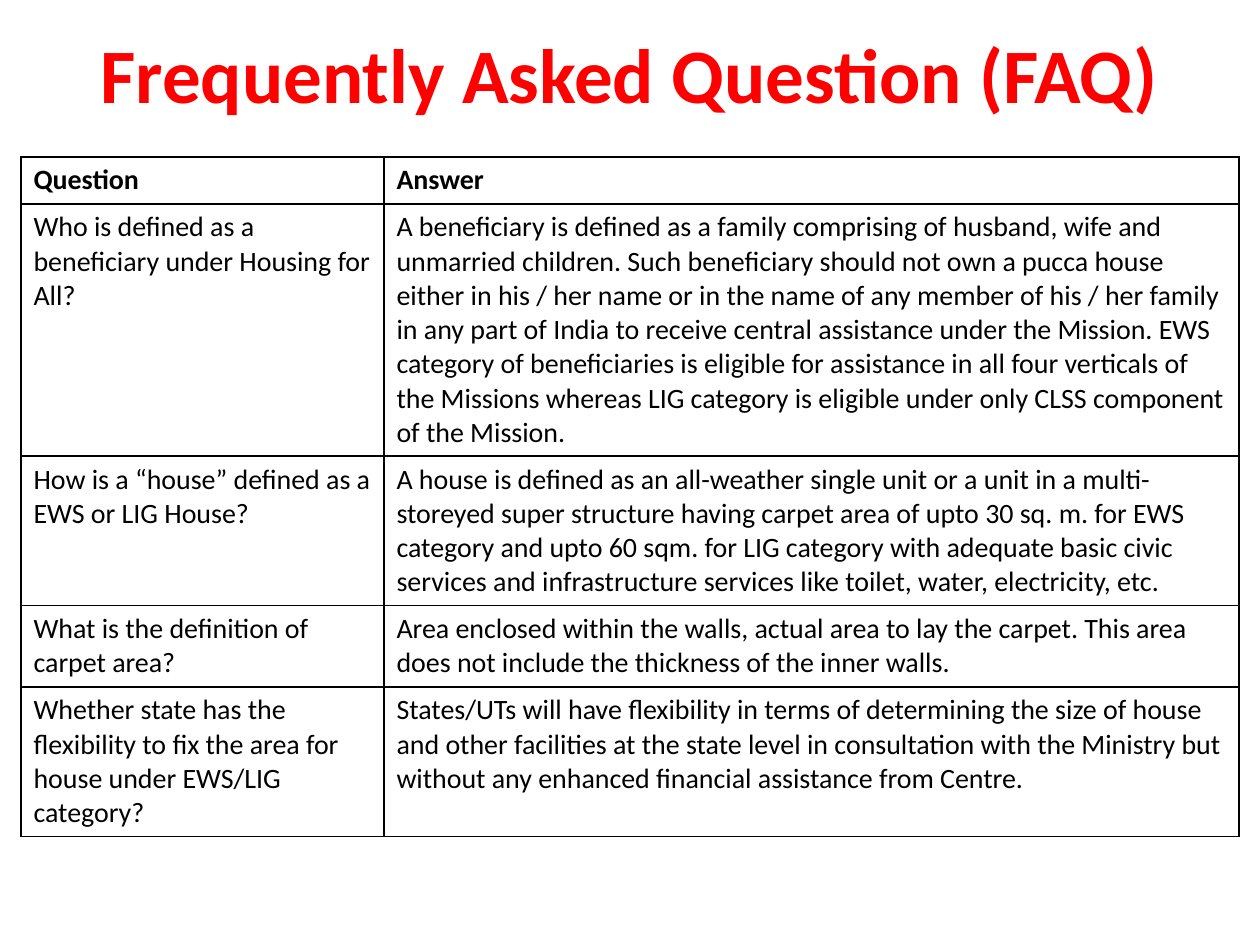
from lxml import etree
from pptx import Presentation, util as u
from pptx.dml.color import RGBColor
from pptx.enum import text
from pptx.oxml.ns import qn

# Content
TITLE = "Frequently Asked Question (FAQ)"
FAQ = [
    ("Question", "Answer"),
    ("Who is defined as a beneficiary under Housing for All?",
     "A beneficiary is defined as a family comprising of husband, wife and unmarried children. "
     "Such beneficiary should not own a pucca house either in his / her name or in the name of "
     "any member of his / her family in any part of India to receive central assistance under "
     "the Mission. EWS category of beneficiaries is eligible for assistance in all four "
     "verticals of the Missions whereas LIG category is eligible under only CLSS component of "
     "the Mission."),
    ("How is a “house” defined as a EWS or LIG House?",
     "A house is defined as an all-weather single unit or a unit in a multi-storeyed super "
     "structure having carpet area of upto 30 sq. m. for EWS category and upto 60 sqm. for LIG "
     "category with adequate basic civic services and infrastructure services like toilet, "
     "water, electricity, etc."),
    ("What is the definition of carpet area?",
     "Area enclosed within the walls, actual area to lay the carpet. This area does not include "
     "the thickness of the inner walls."),
    ("Whether state has the flexibility to fix the area for house under EWS/LIG category?",
     "States/UTs will have flexibility in terms of determining the size of house and other "
     "facilities at the state level in consultation with the Ministry but without any enhanced "
     "financial assistance from Centre."),
]

# Layout in px, 126 to the inch
PX = u.Inches(1) // 126
LEFT, TITLE_TOP, TITLE_HEIGHT, TABLE_TOP = 21, 10, 104, 157
COLUMNS = [363, 855]
ROWS = [46, 251, 148, 80, 148]
COLORS = {"title": "FF0000", "text": "000000", "border": "000000"}


def set_all(target, values):
    for name, value in values.items():
        setattr(target, name, value)


def style_font(font, size, color, bold):
    set_all(font, {"name": "Calibri", "size": u.Pt(size), "bold": bold})
    font.color.rgb = RGBColor.from_string(COLORS[color])


def add_borders(cell):
    props = cell._tc.get_or_add_tcPr()
    for index, side in enumerate(("lnL", "lnR", "lnT", "lnB")):
        line = etree.Element(qn("a:" + side), w=str(u.Pt(1)))
        fill = etree.SubElement(line, qn("a:solidFill"))
        etree.SubElement(fill, qn("a:srgbClr"), val=COLORS["border"])
        props.insert(index, line)


deck = Presentation()
set_all(deck, {"slide_width": u.Inches(10), "slide_height": u.Inches(7.5)})
page = deck.slides.add_slide(deck.slide_layouts[5])
width = sum(COLUMNS)

# Title
title = page.shapes.title
set_all(title, {"left": LEFT * PX, "top": TITLE_TOP * PX,
                "width": width * PX, "height": TITLE_HEIGHT * PX})
frame = title.text_frame
frame.text = TITLE
set_all(frame, {"word_wrap": True, "auto_size": text.MSO_AUTO_SIZE.NONE,
                "vertical_anchor": text.MSO_ANCHOR.TOP,
                "margin_top": 16 * PX, "margin_bottom": 0})
para = frame.paragraphs[0]
para.alignment = text.PP_ALIGN.CENTER
style_font(para.runs[0].font, 44, "title", True)

# Question and answer table
table = page.shapes.add_table(len(ROWS), len(COLUMNS), LEFT * PX, TABLE_TOP * PX,
                              width * PX, sum(ROWS) * PX).table
set_all(table, {"first_row": False, "horz_banding": False})
for column, size in zip(table.columns, COLUMNS):
    column.width = size * PX
for number, (row, size, entries) in enumerate(zip(table.rows, ROWS, FAQ)):
    row.height = size * PX
    for cell, entry in zip(row.cells, entries):
        cell.text = entry
        cell.fill.background()
        add_borders(cell)
        style_font(cell.text_frame.paragraphs[0].runs[0].font, 16, "text", number == 0)

deck.save("out.pptx")
